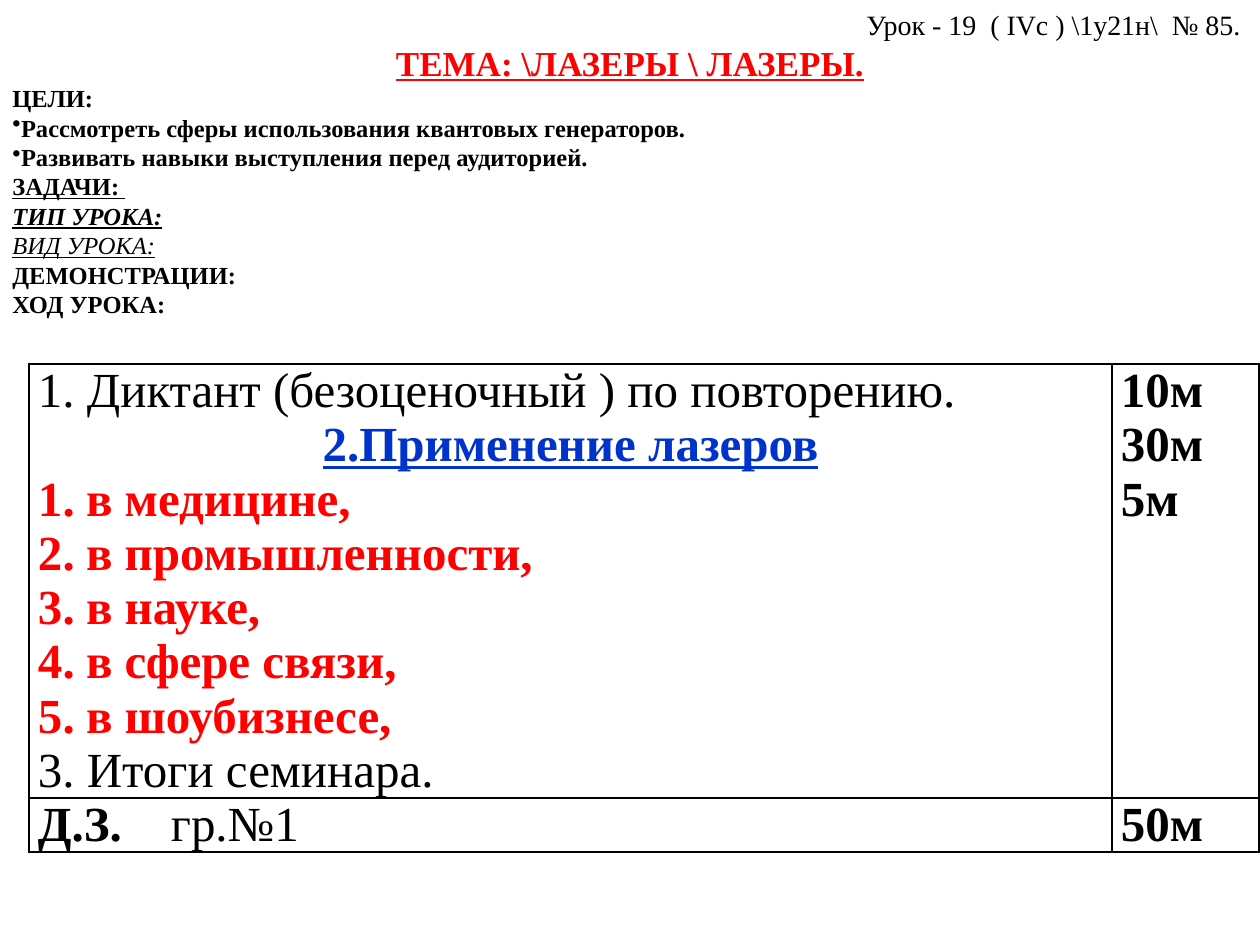
from lxml.etree import SubElement as Sub
from pptx import Presentation
from pptx.dml.color import RGBColor as Rgb
from pptx.enum.text import MSO_ANCHOR as Anchor, MSO_AUTO_SIZE as Auto, PP_ALIGN as Align
from pptx.oxml.ns import qn
from pptx.util import Emu, Pt

SCALE = 914400 / 126
FONT = "Times New Roman"
BLACK, RED, BLUE = "000000", "FF0000", "0033CC"
BOLD = {"bold": True}
POINT = {"bold": True, "mark": "•"}
FIELD = {"bold": True, "color": RED, "mark": "1."}

# Each line: text, format
HEAD = [
    (r"Урок - 19  ( IVc ) \1у21н\  № 85. ", {"size": 16, "align": Align.RIGHT}),
    (r"ТЕМА: \ЛАЗЕРЫ \ ЛАЗЕРЫ.",
     {"size": 20, "color": RED, "bold": True, "under": True, "align": Align.CENTER}),
    ("ЦЕЛИ:", BOLD),
    ("Рассмотреть сферы использования квантовых генераторов.", POINT),
    ("Развивать навыки выступления перед аудиторией.", POINT),
    ("ЗАДАЧИ: ", {"bold": True, "under": True}),
    ("ТИП УРОКА:", {"bold": True, "under": True, "italic": True}),
    ("ВИД УРОКА:", {"under": True, "italic": True}),
    ("ДЕМОНСТРАЦИИ:", BOLD),
    ("ХОД УРОКА:", BOLD),
]
FIELDS = ["в медицине,", "в промышленности,", "в науке,", "в сфере связи,", "в шоубизнесе,"]
PLAN = [
    ("1. Диктант (безоценочный ) по повторению.", {}),
    ("2.Применение лазеров",
     {"color": BLUE, "bold": True, "under": True, "align": Align.CENTER}),
    *[(name, FIELD) for name in FIELDS],
    ("3. Итоги семинара.", {}),
]
TIMES = [(time, BOLD) for time in ("10м", "30м", "5м")]
CELLS = [[PLAN, TIMES], [[("Д.З.", BOLD)], [("50м", BOLD)]]]


def px(num):
    return Emu(round(num * SCALE))


def rgb(code):
    return Rgb.from_string(code)


def style(run, size, color=BLACK, bold=False, under=False, italic=False):
    font = run.font
    font.name, font.size = FONT, Pt(size)
    font.color.rgb = rgb(color)
    font.bold, font.underline, font.italic = bold, under, italic


def bullet(para, mark):
    props = para._p.get_or_add_pPr()
    if mark == "1.":
        props.set("marL", str(px(48)))
        props.set("indent", str(-px(48)))
        Sub(props, qn("a:buAutoNum"), type="arabicPeriod")
    else:
        Sub(props, qn("a:buChar"), char=mark)


def write(frame, lines, size):
    frame.text = "\n".join(text for text, _ in lines)
    for para, (_, form) in zip(frame.paragraphs, lines):
        look = {"size": size, **form}
        para.alignment = look.pop("align", Align.LEFT)
        mark = look.pop("mark", None)
        if mark:
            bullet(para, mark)
        for run in para.runs:
            style(run, **look)


def border(cell):
    props = cell._tc.get_or_add_tcPr()
    for side in ("lnL", "lnR", "lnT", "lnB"):
        line = Sub(props, qn(f"a:{side}"), w=str(Pt(1)))
        Sub(Sub(line, qn("a:solidFill")), qn("a:srgbClr"), val=BLACK)


def add_head(slide):
    frame = slide.shapes.add_textbox(0, 0, px(1260), px(326)).text_frame
    frame.word_wrap = True
    frame.auto_size = Auto.SHAPE_TO_FIT_TEXT
    frame.vertical_anchor = Anchor.MIDDLE
    write(frame, HEAD, 14)


def add_plan(slide):
    widths, heights = (1083, 147), (434, 54)
    table = slide.shapes.add_table(2, 2, px(29), px(364), px(sum(widths)),
                                   px(sum(heights))).table
    table.first_row = table.horz_banding = False
    for col, width in zip(table.columns, widths):
        col.width = px(width)
    for row, height, texts in zip(table.rows, heights, CELLS):
        row.height = px(height)
        for cell, lines in zip(row.cells, texts):
            cell.margin_left = cell.margin_right = px(9)
            cell.margin_top = cell.margin_bottom = 0
            border(cell)
            cell.fill.background()
            write(cell.text_frame, lines, 28)
    return table


def add_group(cell):
    # Homework group, set off by a tab stop
    para = cell.text_frame.paragraphs[0]
    tabs = Sub(para._p.get_or_add_pPr(), qn("a:tabLst"))
    Sub(tabs, qn("a:tab"), pos=str(px(133)), algn="l")
    run = para.add_run()
    run.text = "\tгр.№1"
    style(run, 28)


def main():
    deck = Presentation()
    deck.slide_width, deck.slide_height = px(1260), px(945)
    slide = deck.slides.add_slide(deck.slide_layouts[6])
    # Lesson plan, then its heading
    table = add_plan(slide)
    add_group(table.cell(1, 0))
    add_head(slide)
    deck.save("out.pptx")


if __name__ == "__main__":
    main()
